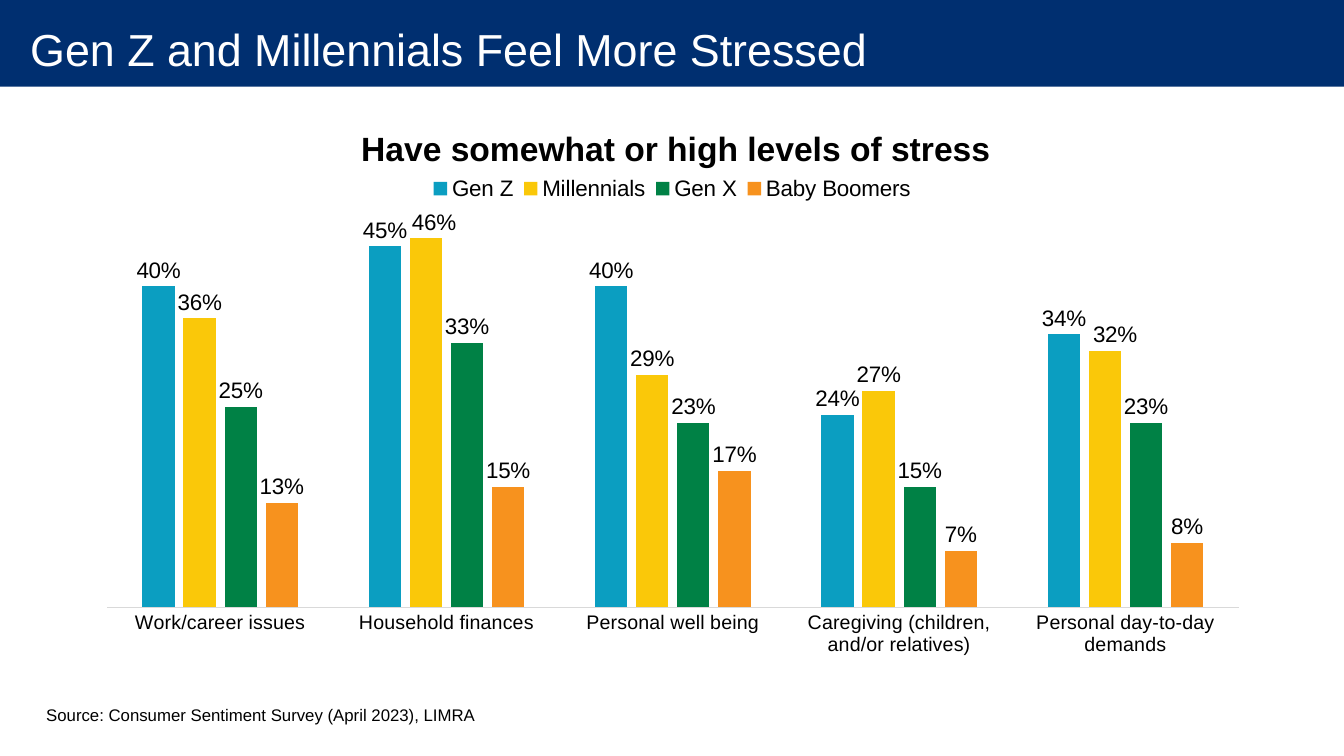
"""Build a slide with a clustered column chart of stress levels by generation."""
from lxml import etree
from pptx import Presentation
from pptx.chart.data import CategoryChartData
from pptx.dml.color import RGBColor
from pptx.enum.chart import XL_CHART_TYPE, XL_LABEL_POSITION, XL_LEGEND_POSITION, XL_TICK_MARK
from pptx.enum.shapes import MSO_SHAPE
from pptx.enum.text import MSO_ANCHOR
from pptx.oxml.ns import qn
from pptx.util import Inches, Pt

CLUSTERED = XL_CHART_TYPE.COLUMN_CLUSTERED
OUTSIDE = XL_LABEL_POSITION.OUTSIDE_END
LEGEND_TOP = XL_LEGEND_POSITION.TOP
NO_TICK = XL_TICK_MARK.NONE
MIDDLE = MSO_ANCHOR.MIDDLE
TOP = MSO_ANCHOR.TOP
RECTANGLE = MSO_SHAPE.RECTANGLE

WIDTH, HEIGHT = 13.33, 7.5
COLORS = {
    "navy": "002F70", "white": "FFFFFF", "black": "000000", "axis": "D9D9D9",
    "Gen Z": "0B9EC1", "Millennials": "FAC809", "Gen X": "008145", "Baby Boomers": "F7921E",
}
TITLE = "Gen Z and Millennials Feel More Stressed"
CHART_TITLE = "Have somewhat or high levels of stress"
SOURCE = "Source: Consumer Sentiment Survey (April 2023), LIMRA"
CATEGORIES = [
    "Work/career issues", "Household finances", "Personal well being",
    "Caregiving (children, and/or relatives)", "Personal day-to-day demands",
]
SERIES = {
    "Gen Z": (0.40, 0.45, 0.40, 0.24, 0.34),
    "Millennials": (0.36, 0.46, 0.29, 0.27, 0.32),
    "Gen X": (0.25, 0.33, 0.23, 0.15, 0.23),
    "Baby Boomers": (0.13, 0.15, 0.17, 0.07, 0.08),
}
NUDGED_LABELS = {("Millennials", 1): 0.007, ("Millennials", 4): 0.009}
BAND = (0, 0, WIDTH, 0.86)
TITLE_BOX = (0, 0, WIDTH, 0.97)
CHART_BOX = (1.05, 0.97, 11.24, 5.63)
SOURCE_BOX = (0.36, 6.94, 4.5, 0.3)


def color(name):
    return RGBColor.from_string(COLORS[name])


def set_font(font, size, shade="black", bold=False):
    for key, value in {"name": "Arial", "size": Pt(size), "bold": bold}.items():
        setattr(font, key, value)
    font.color.rgb = color(shade)


def add_text(page, place, text, size, shade, anchor, margins):
    box = page.shapes.add_textbox(*map(Inches, place))
    frame = box.text_frame
    settings = dict(zip(("margin_left", "margin_top", "margin_right", "margin_bottom"), map(Inches, margins)))
    settings.update(word_wrap=False, vertical_anchor=anchor)
    for key, value in settings.items():
        setattr(frame, key, value)
    span = frame.paragraphs[0].add_run()
    span.text = text
    set_font(span.font, size, shade)


def set_layout(parent, index, **values):
    for old in parent.findall(qn("c:layout")):
        parent.remove(old)
    layout = etree.Element(qn("c:layout"))
    manual = etree.SubElement(layout, qn("c:manualLayout"))
    for tag, value in values.items():
        etree.SubElement(manual, qn("c:" + tag)).set("val", str(value))
    parent.insert(index, layout)


def add_stress_chart(page):
    data = CategoryChartData(number_format="0%")
    data.categories = CATEGORIES
    for name, values in SERIES.items():
        data.add_series(name, values)
    chart = page.shapes.add_chart(CLUSTERED, *map(Inches, CHART_BOX), data).chart
    set_font(chart.font, 10)

    chart.has_title = True
    span = chart.chart_title.text_frame.paragraphs[0].add_run()
    span.text = CHART_TITLE
    set_font(span.font, 24, bold=True)
    chart.has_legend = True
    chart.legend.position = LEGEND_TOP
    chart.legend.include_in_layout = False
    set_font(chart.legend.font, 16)

    axis = chart.category_axis
    axis.major_tick_mark = axis.minor_tick_mark = NO_TICK
    set_font(axis.tick_labels.font, 14)
    axis.format.line.color.rgb = color("axis")
    axis.format.line.width = Pt(0.75)
    scale = {"visible": False, "has_major_gridlines": False, "minimum_scale": 0, "maximum_scale": 0.5}
    for key, value in scale.items():
        setattr(chart.value_axis, key, value)

    plot = chart.plots[0]
    for key, value in {"gap_width": 219, "overlap": -27, "vary_by_categories": False}.items():
        setattr(plot, key, value)
    for series in plot.series:
        series.format.fill.solid()
        series.format.fill.fore_color.rgb = color(series.name)
        labels = series.data_labels
        label_format = {"show_value": True, "position": OUTSIDE,
                        "number_format": "0%", "number_format_is_linked": False}
        for key, value in label_format.items():
            setattr(labels, key, value)
        set_font(labels.font, 16)
        for name, point in NUDGED_LABELS:
            if name == series.name:
                label = series.points[point].data_label
                set_font(label.font, 16)
                label.position = OUTSIDE

    root = chart.element
    for label, shift in zip(root.iter(qn("c:dLbl")), NUDGED_LABELS.values()):
        set_layout(label, 1, x=shift, y=0)
    area = root.find(".//" + qn("c:plotArea"))
    set_layout(area, 0, layoutTarget="inner", xMode="edge", yMode="edge", x=0.001, y=0.191, w=0.999, h=0.707)
    title = root.find(".//" + qn("c:title"))
    set_layout(title, 1, xMode="edge", yMode="edge", x=0.22, y=0.04)
    legend = root.find(".//" + qn("c:legend"))
    set_layout(legend, 1, xMode="edge", yMode="edge", x=0.28, y=0.13, w=0.44, h=0.06)


def main():
    deck = Presentation()
    deck.slide_width, deck.slide_height = Inches(WIDTH), Inches(HEIGHT)
    page = deck.slides.add_slide(deck.slide_layouts[6])
    band = page.shapes.add_shape(RECTANGLE, *map(Inches, BAND))
    band.shadow.inherit = False
    band.fill.solid()
    band.fill.fore_color.rgb = color("navy")
    band.line.fill.background()
    add_text(page, TITLE_BOX, TITLE, 32, "white", MIDDLE, (0.3, 0, 0.2, 0))
    add_stress_chart(page)
    add_text(page, SOURCE_BOX, SOURCE, 12, "black", TOP, (0.1, 0.05, 0.1, 0.05))
    deck.save("out.pptx")


if __name__ == "__main__":
    main()
